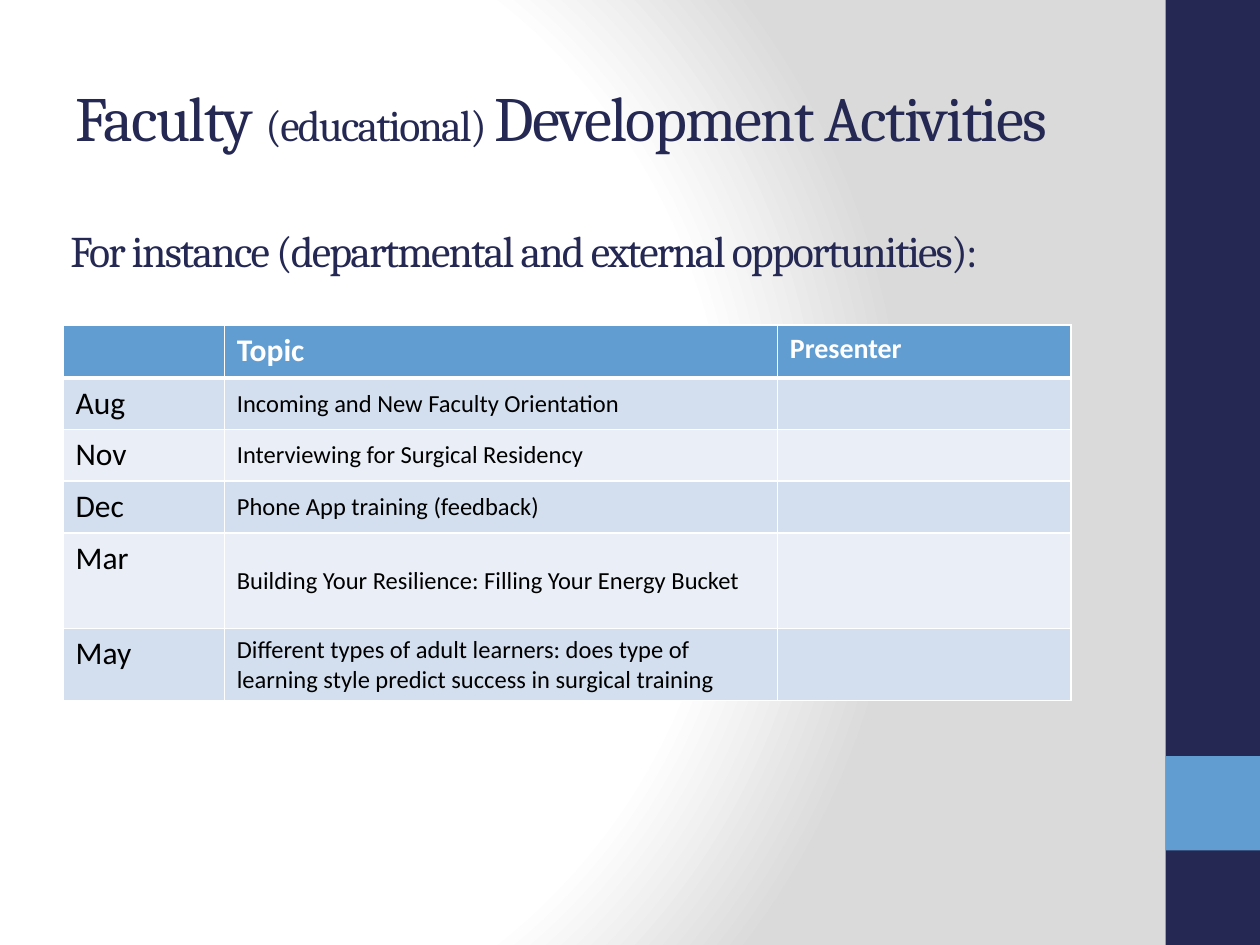
import pptx
import pptx.dml.color
import pptx.enum.shapes
import pptx.enum.text
import pptx.oxml
import pptx.oxml.ns
import pptx.util
from pptx.util import Inches

NAVY, BLUE, WHITE, BLACK = "242852", "629DD1", "FFFFFF", "000000"
BANDS = ("D3DFEE", "EAEFF7")
COLUMN_WIDTHS = (1.28, 4.39, 2.33)
HEADER = ("", "Topic", "Presenter")
HEADER_SIZES = (18, 18, 16)
SESSIONS = (
    ("Aug", "Incoming and New Faculty Orientation", 0.41),
    ("Nov", "Interviewing for Surgical Residency", 0.41),
    ("Dec", "Phone App training (feedback)", 0.41),
    ("Mar", "Building Your Resilience: Filling Your Energy Bucket", 0.76),
    ("May", "Different types of adult learners: does type of learning style "
            "predict success in surgical training", 0.57),
)


def color(value):
    """Return the RGB colour for a hex string."""
    return pptx.dml.color.RGBColor.from_string(value)


def drawing_xml(body):
    """Parse a DrawingML fragment with its namespace declared."""
    return pptx.oxml.parse_xml(
        body.replace(">", f" {pptx.oxml.ns.nsdecls('a')}>", 1))


def set_background(page):
    """Fill the page with a circular white-to-grey gradient."""
    page.background.fill.gradient()
    plain = page.element.find(".//" + pptx.oxml.ns.qn("a:gradFill"))
    stops = "".join(
        f'<a:gs pos="{place * 1000}"><a:srgbClr val="{shade}"/></a:gs>'
        for place, shade in ((0, WHITE), (75, WHITE), (100, "DADADA")))
    radial = drawing_xml(
        f'<a:gradFill rotWithShape="1"><a:gsLst>{stops}</a:gsLst>'
        '<a:path path="circle"><a:fillToRect l="20000" t="50000" '
        'r="100000" b="50000"/></a:path></a:gradFill>')
    plain.getparent().replace(plain, radial)


def add_block(page, top, height, fill):
    """Add a plain rectangle to the right-hand side bar."""
    block = page.shapes.add_shape(
        pptx.enum.shapes.MSO_SHAPE.RECTANGLE,
        Inches(9.25), Inches(top), Inches(0.75), Inches(height))
    block.shadow.inherit = False
    block.fill.solid()
    block.fill.fore_color.rgb = color(fill)
    block.line.fill.background()


def add_heading(page, left, top, spans):
    """Add a tightly spaced serif line made of (text, size) spans."""
    box = page.shapes.add_textbox(
        Inches(left), Inches(top), Inches(8.33), Inches(1.25))
    frame = box.text_frame
    frame.word_wrap = True
    frame.vertical_anchor = pptx.enum.text.MSO_ANCHOR.MIDDLE
    para = frame.paragraphs[0]
    para.font.name = "Cambria"
    for text, size in spans:
        span = para.add_run()
        span.text = text
        span.font.size = pptx.util.Pt(size)
        span.font.color.rgb = color(NAVY)
        span.font.name = "Cambria"
        span.font._element.set("spc", "-100")


def set_borders(cell, bottom):
    """Draw white borders round a cell, with the given bottom width."""
    properties = cell._tc.get_or_add_tcPr()
    widths = (("lnL", 1), ("lnR", 1), ("lnT", 1), ("lnB", bottom))
    for place, (side, width) in enumerate(widths):
        properties.insert(place, drawing_xml(
            f'<a:{side} w="{pptx.util.Pt(width)}"><a:solidFill>'
            f'<a:srgbClr val="{WHITE}"/></a:solidFill></a:{side}>'))


def fill_cell(cell, text, size, fill, ink=BLACK, header=False, middle=False):
    """Set the text, colours and borders of one cell."""
    cell.text = text
    font = cell.text_frame.paragraphs[0].font
    font.name = "Calibri"
    font.size = pptx.util.Pt(size)
    font.bold = header
    font.color.rgb = color(ink)
    if middle:
        cell.vertical_anchor = pptx.enum.text.MSO_ANCHOR.MIDDLE
    cell.fill.solid()
    cell.fill.fore_color.rgb = color(fill)
    set_borders(cell, 3 if header else 1)


def add_schedule(page):
    """Add the table of sessions."""
    heights = [0.42] + [height for _, _, height in SESSIONS]
    table = page.shapes.add_table(
        len(heights), len(COLUMN_WIDTHS), Inches(0.5), Inches(2.58),
        Inches(sum(COLUMN_WIDTHS)), Inches(sum(heights))).table
    for column, width in zip(table.columns, COLUMN_WIDTHS):
        column.width = Inches(width)
    for row, height in zip(table.rows, heights):
        row.height = Inches(height)
    for place, (text, size) in enumerate(zip(HEADER, HEADER_SIZES)):
        fill_cell(table.cell(0, place), text, size, BLUE, WHITE, header=True)
    for index, (month, topic, _) in enumerate(SESSIONS):
        band = BANDS[index % 2]
        month_cell, topic_cell, presenter_cell = table.rows[index + 1].cells
        fill_cell(month_cell, month, 18, band)
        fill_cell(topic_cell, topic, 14, band, middle=True)
        fill_cell(presenter_cell, "", 14, band)


def main():
    """Build the slide and save it."""
    deck = pptx.Presentation()
    deck.slide_width, deck.slide_height = Inches(10), Inches(7.5)
    page = deck.slides.add_slide(deck.slide_layouts[6])
    set_background(page)
    add_block(page, 0, 7.5, NAVY)
    add_block(page, 6, 0.75, BLUE)
    add_heading(page, 0.5, 0.3, (
        ("Faculty ", 36), ("(educational) ", 25),
        ("Development Activities", 36)))
    add_schedule(page)
    add_heading(page, 0.46, 1.36, (
        ("For instance (departmental and external opportunities):", 25),))
    deck.save("out.pptx")


if __name__ == "__main__":
    main()
